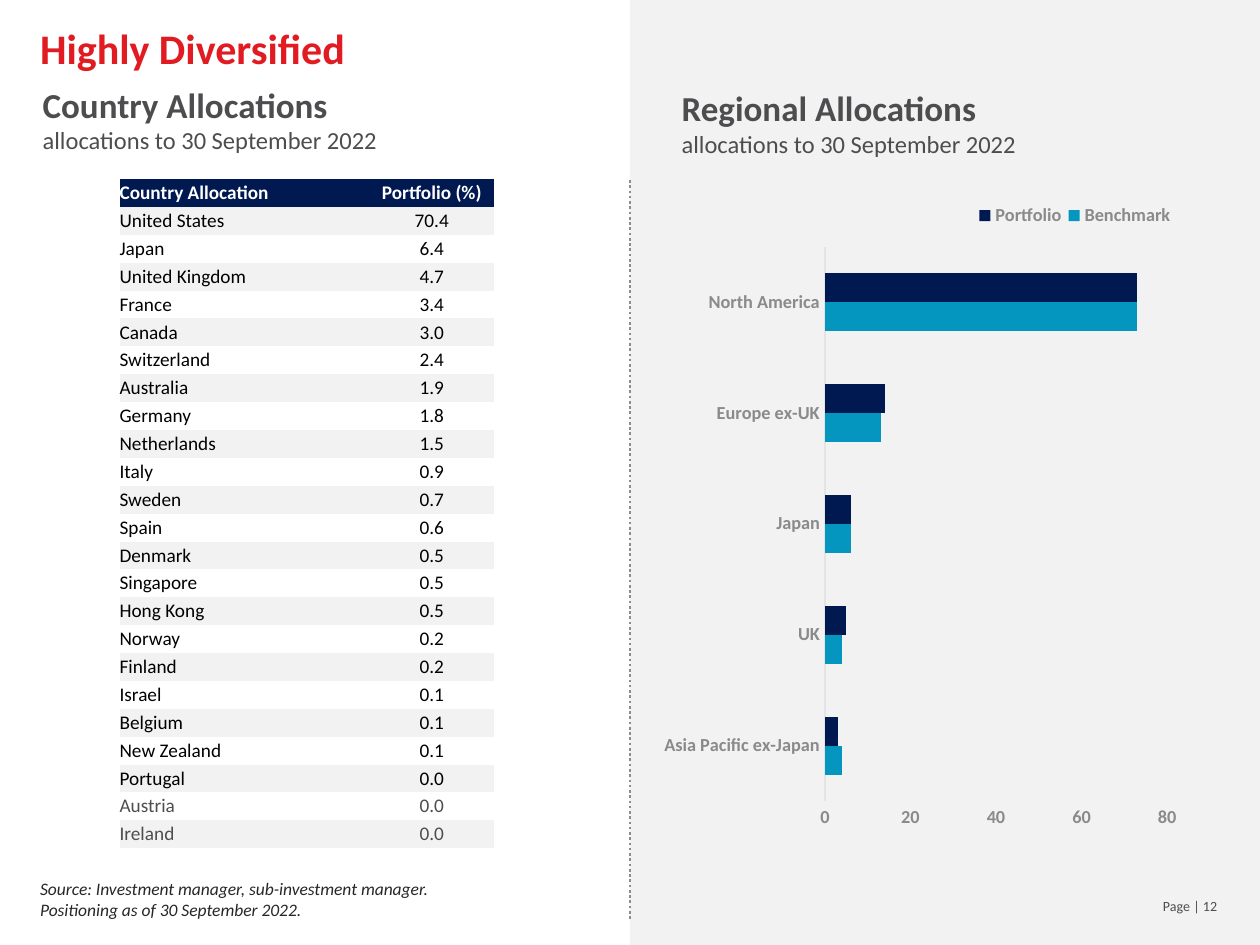
from lxml import etree
from pptx import Presentation
from pptx.chart.data import CategoryChartData
from pptx.dml.color import RGBColor
from pptx.enum.chart import XL_CHART_TYPE, XL_LEGEND_POSITION, XL_TICK_MARK
from pptx.enum.dml import MSO_LINE
from pptx.enum.shapes import MSO_CONNECTOR, MSO_SHAPE
from pptx.enum.text import MSO_ANCHOR, PP_ALIGN
from pptx.oxml.ns import qn
from pptx.util import Cm, Pt

BAR = XL_CHART_TYPE.BAR_CLUSTERED
BOTTOM = XL_LEGEND_POSITION.BOTTOM
NO_TICK = XL_TICK_MARK.NONE
DOTS = MSO_LINE.ROUND_DOT
STRAIGHT = MSO_CONNECTOR.STRAIGHT
RECT = MSO_SHAPE.RECTANGLE
MIDDLE = MSO_ANCHOR.MIDDLE
LEFT, CENTER, RIGHT = PP_ALIGN.LEFT, PP_ALIGN.CENTER, PP_ALIGN.RIGHT

FONT = "Calibri"
COLORS = {
    "navy": "001951", "blue": "0596BF", "red": "E11B22", "panel": "F2F2F2",
    "white": "FFFFFF", "black": "000000", "ink": "272728", "text": "4D4D4F",
    "rule": "8A8C8E", "label": "8A8A8D", "axis": "E4E4E5",
}
COUNTRIES = [
    ("United States", "70.4"), ("Japan", "6.4"), ("United Kingdom", "4.7"),
    ("France", "3.4"), ("Canada", "3.0"), ("Switzerland", "2.4"),
    ("Australia", "1.9"), ("Germany", "1.8"), ("Netherlands", "1.5"),
    ("Italy", "0.9"), ("Sweden", "0.7"), ("Spain", "0.6"),
    ("Denmark", "0.5"), ("Singapore", "0.5"), ("Hong Kong", "0.5"),
    ("Norway", "0.2"), ("Finland", "0.2"), ("Israel", "0.1"),
    ("Belgium", "0.1"), ("New Zealand", "0.1"), ("Portugal", "0.0"),
    ("Austria", "0.0"), ("Ireland", "0.0"),
]
MUTED = {"Austria", "Ireland"}
REGIONS = ["Asia Pacific ex-Japan", "UK", "Japan", "Europe ex-UK", "North America"]
SERIES = [
    ("Benchmark", (4, 4, 6, 13, 73), "blue"),
    ("Portfolio", (3, 5, 6, 14, 73), "navy"),
]


def rgb(name):
    return RGBColor.from_string(COLORS[name])


def paint(target, color):
    target.fill.solid()
    target.fill.fore_color.rgb = rgb(color)


def style(font, size, color, bold=False, italic=False):
    font.name, font.size = FONT, Pt(size)
    font.bold, font.italic = bold, italic
    font.color.rgb = rgb(color)


def add_run(p, text, size, color, bold=False, italic=False):
    r = p.add_run()
    r.text = text
    style(r.font, size, color, bold, italic)


def text_box(s, x, y, w, h, inset=True, wrap=True):
    tf = s.shapes.add_textbox(Cm(x), Cm(y), Cm(w), Cm(h)).text_frame
    tf.word_wrap = wrap
    if not inset:
        tf.margin_left = tf.margin_right = tf.margin_top = tf.margin_bottom = 0
    return tf.paragraphs[0]


def add_heading(s, x, y, text):
    p = text_box(s, x, y, 11.84, 1.55, inset=False)
    add_run(p, text, 20, "text", bold=True)
    p.add_line_break()
    add_run(p, "allocations to 30 September 2022", 14, "text")


def add_background(s, x, y, w, h):
    sp = s.shapes.add_shape(RECT, Cm(x), Cm(y), Cm(w), Cm(h))
    sp.shadow.inherit = False
    paint(sp, "panel")
    sp.line.fill.background()

    p = text_box(s, x + 10.44, y + 17.96, 1.65, 0.61, wrap=False)
    p.alignment = RIGHT
    add_run(p, "Page | 12", 8, "text")

    line = s.shapes.add_connector(STRAIGHT, Cm(x), Cm(y + 3.63), Cm(x), Cm(y + 18.54))
    line.line.color.rgb = rgb("rule")
    line.line.width = Pt(1.5)
    line.line.dash_style = DOTS
    etree.SubElement(line._element.spPr, qn("a:effectLst"))


def clear_borders(cell):
    tc_pr = cell._tc.get_or_add_tcPr()
    for i, side in enumerate(("lnL", "lnR", "lnT", "lnB")):
        border = etree.Element(qn(f"a:{side}"), w="0")
        etree.SubElement(border, qn("a:noFill"))
        tc_pr.insert(i, border)


def add_country_table(s, x, y, w, h):
    rows = [("Country Allocation", "Portfolio (%)")] + COUNTRIES
    table = s.shapes.add_table(len(rows), 2, Cm(x), Cm(y), Cm(w), Cm(h)).table
    table.first_row = table.horz_banding = False
    table.columns[0].width = Cm(w * 0.67)
    table.columns[1].width = Cm(w * 0.33)
    for i, row in enumerate(rows):
        table.rows[i].height = Cm(h / len(rows))
        if i == 0:
            fill, color = "navy", "white"
        else:
            fill = "panel" if i % 2 else "white"
            color = "text" if row[0] in MUTED else "black"
        for j, text in enumerate(row):
            cell = table.cell(i, j)
            paint(cell, fill)
            clear_borders(cell)
            cell.vertical_anchor = MIDDLE
            cell.margin_left = cell.margin_right = 0
            cell.margin_top = cell.margin_bottom = 0
            p = cell.text_frame.paragraphs[0]
            p.alignment = CENTER if j else LEFT
            add_run(p, text, 11, color, bold=i == 0)


def set_layout(parent, after, target, **values):
    for old in parent.findall(qn("c:layout")):
        parent.remove(old)
    layout = etree.Element(qn("c:layout"))
    manual = etree.SubElement(layout, qn("c:manualLayout"))
    if target:
        etree.SubElement(manual, qn("c:layoutTarget")).set("val", target)
    for key in ("xMode", "yMode"):
        etree.SubElement(manual, qn(f"c:{key}")).set("val", "edge")
    for key, value in values.items():
        etree.SubElement(manual, qn(f"c:{key}")).set("val", str(value))
    if after is None:
        parent.insert(0, layout)
    else:
        after.addnext(layout)


def add_region_chart(s, x, y, w, h):
    data = CategoryChartData(number_format="0")
    data.categories = REGIONS
    for name, values, _ in SERIES:
        data.add_series(name, values)
    chart = s.shapes.add_chart(BAR, Cm(x), Cm(y), Cm(w), Cm(h), data).chart
    chart.has_title = False
    style(chart.font, 10.5, "text", bold=True)

    plot = chart.plots[0]
    plot.vary_by_categories = False
    plot.gap_width, plot.overlap = 182, 0
    for series, (_, _, color) in zip(plot.series, SERIES):
        paint(series.format, color)

    for axis in (chart.category_axis, chart.value_axis):
        axis.major_tick_mark = axis.minor_tick_mark = NO_TICK
        axis.has_major_gridlines = False
        style(axis.tick_labels.font, 10.5, "label", bold=True)
    line = chart.category_axis.format.line
    line.color.rgb, line.width = rgb("axis"), Pt(0.75)
    values = chart.value_axis
    values.format.line.fill.background()
    values.minimum_scale, values.maximum_scale, values.major_unit = 0, 80, 20
    values.tick_labels.number_format = "0"
    values.tick_labels.number_format_is_linked = False

    chart.has_legend = True
    legend = chart.legend
    legend.position = BOTTOM
    legend.include_in_layout = False
    style(legend.font, 10.5, "label", bold=True)
    legend_el = legend._element
    set_layout(legend_el, legend_el.find(qn("c:legendPos")), None,
               x=0.58, y=0.01, w=0.39, h=0.05)
    plot_area = chart._chartSpace.find(qn("c:chart")).find(qn("c:plotArea"))
    set_layout(plot_area, None, "inner", x=0.3, y=0.08, w=0.65, h=0.8)


def add_country_panel(s, x, y):
    add_country_table(s, x + 2.41, y + 3.61, 7.54, 13.49)
    p = text_box(s, x + 0.56, y + 17.6, 11.86, 1.09)
    p.line_spacing, p.space_after = 0.98, Pt(4)
    add_run(p, "Source: Investment manager, sub-investment manager.", 10, "ink", italic=True)
    p.add_line_break()
    add_run(p, "Positioning as of 30 September 2022.", 10, "ink", italic=True)
    add_heading(s, x + 0.86, y + 1.68, "Country Allocations")
    p = text_box(s, x + 0.56, y + 0.33, 16.84, 1.27)
    add_run(p, "Highly Diversified", 24, "red", bold=True)


def add_region_panel(s, x, y):
    add_heading(s, x + 1.04, y + 1.75, "Regional Allocations")
    add_region_chart(s, x + 0.69, y + 3.86, 10.67, 13.97)


def main():
    prs = Presentation()
    prs.slide_width, prs.slide_height = Cm(25.4), Cm(19.05)
    s = prs.slides.add_slide(prs.slide_layouts[6])
    add_background(s, 12.7, 0, 12.7, 19.05)
    add_country_panel(s, 0, 0)
    add_region_panel(s, 12.7, 0)
    prs.save("out.pptx")


if __name__ == "__main__":
    main()
